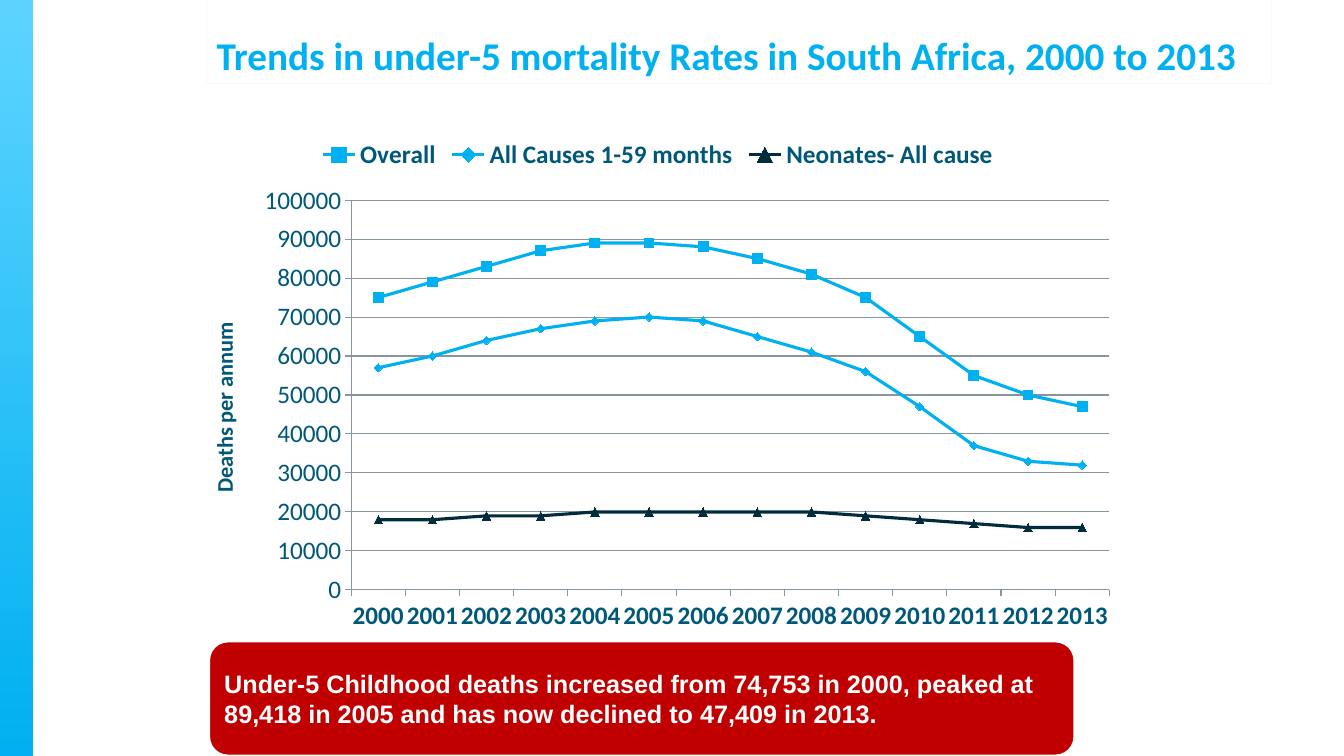
"""Build a slide on under-5 mortality trends in South Africa."""
from lxml import etree
from pptx import Presentation
from pptx.chart.data import CategoryChartData
from pptx.dml.color import RGBColor
from pptx.enum.chart import XL_CHART_TYPE as Kind, XL_LEGEND_POSITION as Spot
from pptx.enum.chart import XL_MARKER_STYLE as Mark, XL_TICK_MARK as Tick
from pptx.enum.shapes import MSO_SHAPE as Shape
from pptx.enum.text import MSO_ANCHOR as Anchor, PP_ALIGN as Align
from pptx.oxml.ns import qn
from pptx.util import Inches, Pt

SKY, TEAL, NAVY, GRID = "00B0F0", "005878", "002C3C", "8795A1"
RED, WHITE = "C00000", "FFFFFF"


def rgb(code):
    return RGBColor.from_string(code)


def add_box(kind, place, fill, line, width, anchor, lines, font, size, color):
    box = slide.shapes.add_shape(kind, *map(Inches, place))
    box.shadow.inherit = False
    box.fill.solid()
    box.fill.fore_color.rgb = rgb(fill)
    box.line.color.rgb = rgb(line)
    box.line.width = Pt(width)
    frame = box.text_frame
    frame.word_wrap = True
    frame.vertical_anchor = anchor
    for i, text in enumerate(lines):
        para = frame.add_paragraph() if i else frame.paragraphs[0]
        para.text = text
        para.alignment = Align.LEFT
        para.font.name = font
        para.font.size = Pt(size)
        para.font.bold = True
        para.font.color.rgb = rgb(color)


deck = Presentation()
deck.slide_width, deck.slide_height = Inches(13.33), Inches(7.5)
slide = deck.slides.add_slide(deck.slide_layouts[6])
slide.background.fill.solid()
slide.background.fill.fore_color.rgb = rgb(WHITE)

band = slide.shapes.add_shape(Shape.RECTANGLE, 0, 0, Inches(0.33), Inches(7.5))
band.shadow.inherit = False
band.line.fill.background()
band.fill.gradient()
band.fill.gradient_angle = 270
for stop, tone in zip(band.fill.gradient_stops, ("5DD4FF", SKY)):
    stop.color.rgb = rgb(tone)

add_box(Shape.RECTANGLE, (2.05, 0, 10.56, 0.83), WHITE, "F9F9F9", 0.75, Anchor.BOTTOM,
        ["Trends in under-5 mortality Rates in South Africa, 2000 to 2013"],
        "Calibri", 28, SKY)

rows = [
    ("Overall", SKY, Mark.SQUARE, 7,
     (75, 79, 83, 87, 89, 89, 88, 85, 81, 75, 65, 55, 50, 47)),
    ("All Causes 1-59 months", SKY, Mark.DIAMOND, 6,
     (57, 60, 64, 67, 69, 70, 69, 65, 61, 56, 47, 37, 33, 32)),
    ("Neonates- All cause", NAVY, Mark.TRIANGLE, 6,
     (18, 18, 19, 19, 20, 20, 20, 20, 20, 19, 18, 17, 16, 16)),
]
data = CategoryChartData(number_format="0")
data.categories = [str(year) for year in range(2000, 2014)]
for name, tone, mark, size, deaths in rows:
    data.add_series(name, [1000 * count for count in deaths])
place = map(Inches, (1.86, 1.26, 9.33, 5.11))
chart = slide.shapes.add_chart(Kind.LINE_MARKERS, *place, data).chart
chart.has_title = False
chart.font.name = "Calibri"
chart.font.size = Pt(18)
chart.font.color.rgb = rgb(TEAL)
chart.has_legend = True
chart.legend.position = Spot.TOP
chart.legend.include_in_layout = False
chart.legend.font.size = Pt(18)
chart.legend.font.bold = True

plot = chart.plots[0]
plot.vary_by_categories = False
for line, (name, tone, mark, size, deaths) in zip(plot.series, rows):
    line.smooth = False
    line.format.line.color.rgb = rgb(tone)
    line.format.line.width = Pt(2.25)
    line.marker.style = mark
    line.marker.size = size
    line.marker.format.fill.solid()
    line.marker.format.fill.fore_color.rgb = rgb(tone)
    line.marker.format.line.color.rgb = rgb(tone)

years, scale = chart.category_axis, chart.value_axis
for axis in (years, scale):
    axis.major_tick_mark = Tick.OUTSIDE
    axis.minor_tick_mark = Tick.NONE
    axis.format.line.color.rgb = rgb(GRID)
    axis.tick_labels.font.size = Pt(18)
years.tick_labels.font.bold = True
scale.minimum_scale, scale.maximum_scale, scale.major_unit = 0, 100000, 10000
scale.has_major_gridlines = True
scale.major_gridlines.format.line.color.rgb = rgb(GRID)
title = scale.axis_title.text_frame.paragraphs[0]
title.text = "Deaths per annum"
title.font.size = Pt(16)
title.font.bold = True
title.font.color.rgb = rgb(TEAL)

area = chart._chartSpace.chart.plotArea
for old in area.findall(qn("c:layout")):
    area.remove(old)
layout = etree.Element(qn("c:layout"))
area.insert(0, layout)
manual = etree.SubElement(layout, qn("c:manualLayout"))
for tag, val in (("layoutTarget", "inner"), ("xMode", "edge"), ("yMode", "edge"),
                 ("x", "0.174"), ("y", "0.142"), ("w", "0.806"), ("h", "0.757")):
    etree.SubElement(manual, qn("c:" + tag)).set("val", val)

add_box(Shape.ROUNDED_RECTANGLE, (2.07, 6.36, 8.59, 1.14), RED, WHITE, 2, Anchor.MIDDLE,
        ["Under-5 Childhood deaths increased from 74,753 in 2000, peaked at",
         "89,418 in 2005 and has now declined to 47,409 in 2013."],
        "Arial", 18, WHITE)

deck.save("out.pptx")
